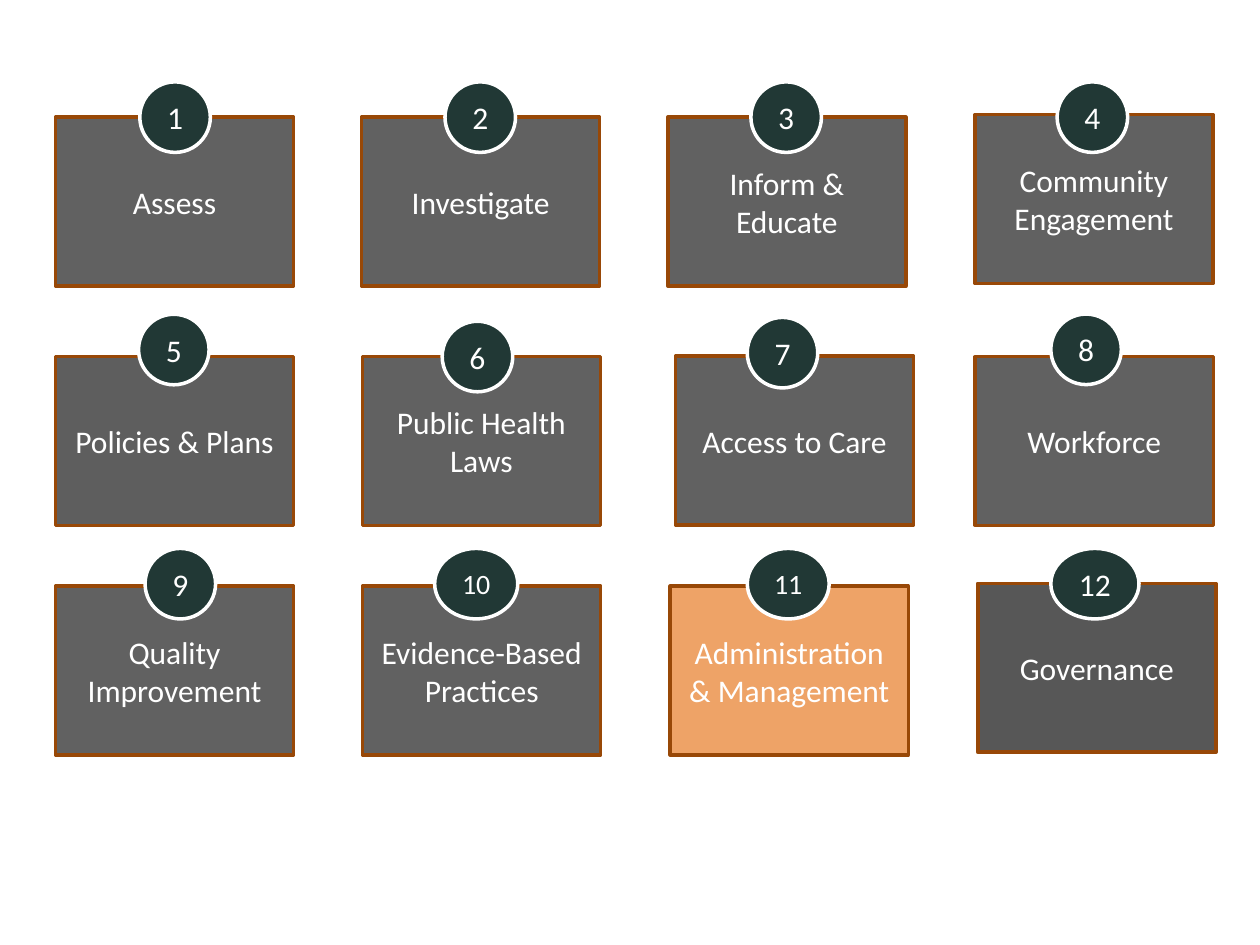
"""Build a slide with twelve numbered public health function cards."""
from lxml import etree
from pptx import Presentation
from pptx.dml.color import RGBColor
from pptx.enum.shapes import MSO_SHAPE
from pptx.enum.text import MSO_ANCHOR, PP_ALIGN
from pptx.oxml.ns import qn
from pptx.util import Pt

RECTANGLE = MSO_SHAPE.RECTANGLE
OVAL = MSO_SHAPE.OVAL
MIDDLE = MSO_ANCHOR.MIDDLE
CENTER = PP_ALIGN.CENTER

BLACK = RGBColor(0x00, 0x00, 0x00)
WHITE = RGBColor(0xFF, 0xFF, 0xFF)
ORANGE = RGBColor(0xE4, 0x6C, 0x0A)
BROWN = RGBColor(0x98, 0x48, 0x07)
DARK_GREEN = RGBColor(0x21, 0x38, 0x35)

CARD_WIDTH, CARD_HEIGHT = 136.1, 96.5
BADGE_HEIGHT = 40.3

CARDS = [
    ("Assess", 31.7, 67, BLACK, 62),
    ("Investigate", 206.6, 67, BLACK, 62),
    ("Inform & Educate", 381.6, 67, BLACK, 62),
    ("Community Engagement", 557.1, 65.5, BLACK, 62),
    ("Policies & Plans", 31.7, 203.8, BLACK, 63),
    ("Public Health Laws", 207, 203.8, BLACK, 62),
    ("Access to Care", 386, 203.5, BLACK, 62),
    ("Workforce", 557.3, 203.8, BLACK, 62),
    ("Quality Improvement", 31.7, 335, BLACK, 62),
    ("Evidence-Based Practices", 207.2, 335, BLACK, 62),
    ("Administration & Management", 383, 335, ORANGE, 62),
    ("Governance", 558.7, 333.4, BLACK, 66),
]

BADGES = [
    (79.9, 46.8, 40.3, 18),
    (254.3, 46.8, 40.3, 18),
    (429.1, 46.8, 40.3, 18),
    (604.1, 46.8, 40.3, 18),
    (79.2, 179.6, 40.3, 18),
    (252.7, 183.6, 40.3, 18),
    (427, 181.4, 40.3, 18),
    (600.5, 179.5, 40.3, 18),
    (82.9, 313.4, 40.3, 18),
    (248.4, 313.4, 47.5, 16),
    (427, 313.4, 46.8, 16),
    (600.5, 313.4, 50.4, 18),
]


def add_labelled_shape(kind, left, top, width, height, text, size, fill, outline):
    shape = slide.shapes.add_shape(kind, Pt(left), Pt(top), Pt(width), Pt(height))
    shape.shadow.inherit = False
    shape.fill.solid()
    shape.fill.fore_color.rgb = fill
    shape.line.color.rgb = outline
    shape.line.width = Pt(2)
    frame = shape.text_frame
    frame.text = text
    frame.word_wrap = True
    frame.vertical_anchor = MIDDLE
    paragraph = frame.paragraphs[0]
    paragraph.alignment = CENTER
    font = paragraph.runs[0].font
    font.name = "Calibri"
    font.size = Pt(size)
    font.color.rgb = WHITE
    return shape


def set_opacity(shape, percent):
    color = shape.fill._xPr.find(qn("a:solidFill"))[0]
    etree.SubElement(color, qn("a:alpha")).set("val", str(percent * 1000))


presentation = Presentation()
presentation.slide_width = Pt(720)
presentation.slide_height = Pt(540)
slide = presentation.slides.add_slide(presentation.slide_layouts[6])

for label, left, top, fill, opacity in CARDS:
    card = add_labelled_shape(
        RECTANGLE, left, top, CARD_WIDTH, CARD_HEIGHT, label, 18, fill, BROWN
    )
    set_opacity(card, opacity)

for number, (left, top, width, size) in enumerate(BADGES, start=1):
    add_labelled_shape(
        OVAL, left, top, width, BADGE_HEIGHT, str(number), size, DARK_GREEN, WHITE
    )

presentation.save("out.pptx")
